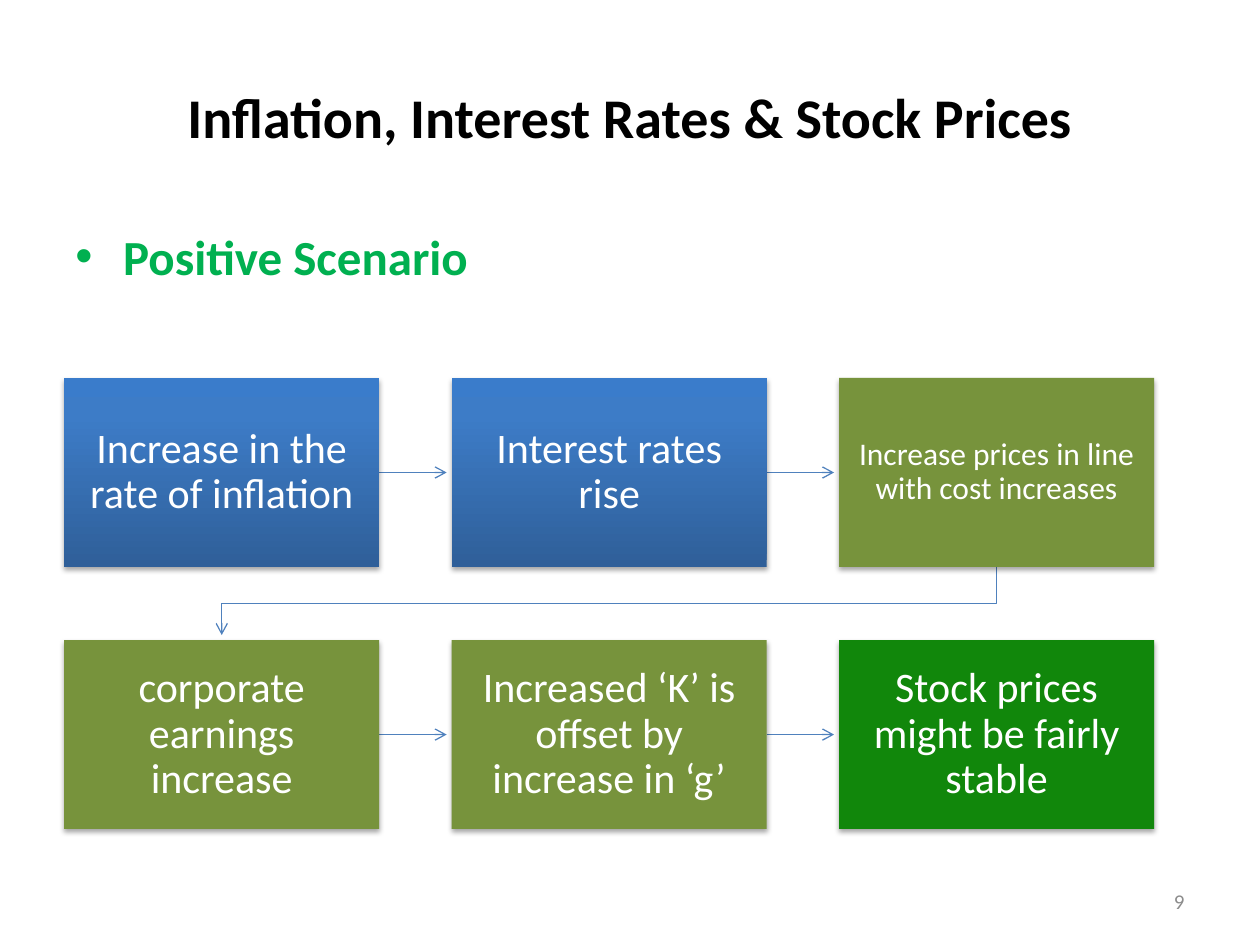
from copy import deepcopy

from lxml.etree import SubElement
from pptx import Presentation
from pptx.dml.color import RGBColor
from pptx.enum.shapes import MSO_CONNECTOR, MSO_SHAPE
from pptx.enum.text import MSO_ANCHOR as Anchor, PP_ALIGN as Align
from pptx.oxml.ns import qn
from pptx.util import Inches, Pt

BLACK = RGBColor(0x00, 0x00, 0x00)
WHITE = RGBColor(0xFF, 0xFF, 0xFF)
GRAY = RGBColor(0x8C, 0x8C, 0x8C)
HEADING_GREEN = RGBColor(0x00, 0xB0, 0x50)
OLIVE = RGBColor(0x77, 0x93, 0x3C)
OUTCOME_GREEN = RGBColor(0x11, 0x87, 0x0B)
ARROW_BLUE = RGBColor(0x4F, 0x81, 0xBD)
BLUE_STOPS = [
    (0, RGBColor(0x2F, 0x5F, 0x99)),
    (0.8, RGBColor(0x3D, 0x7C, 0xC7)),
    (1, RGBColor(0x3A, 0x7C, 0xCB)),
]

COLUMNS = 3
STEP_WIDTH, STEP_HEIGHT = Inches(2.5), Inches(1.5)
ARROW_CLEARANCE = Inches(0.04)

# Text, fill (None for the blue gradient), font size, inset
STEPS = [
    ("Increase in the rate of inflation", None, 24, 0.19),
    ("Interest rates rise", None, 24, 0.19),
    ("Increase prices in line with cost increases", OLIVE, 18, 0.14),
    ("corporate earnings increase", OLIVE, 24, 0.19),
    ("Increased ‘K’ is offset by increase in ‘g’", OLIVE, 24, 0.19),
    ("Stock prices might be fairly stable", OUTCOME_GREEN, 24, 0.19),
]


def write_text(shape, text, size, color, bold=False, align=Align.LEFT,
               anchor=Anchor.MIDDLE, inset=None, line_spacing=None):
    frame = shape.text_frame
    frame.word_wrap = True
    frame.vertical_anchor = anchor
    if inset is not None:
        frame.margin_left = frame.margin_right = Inches(inset)
        frame.margin_top = frame.margin_bottom = Inches(inset)
    paragraph = frame.paragraphs[0]
    paragraph.alignment = align
    paragraph.line_spacing = line_spacing
    run = paragraph.add_run()
    run.text = text
    font = run.font
    font.name, font.size, font.bold = "Calibri", Pt(size), bold
    font.color.rgb = color
    return paragraph


def add_title(slide, left, top, width, height):
    title = slide.shapes.add_textbox(left, top, width, height)
    write_text(title, "Inflation, Interest Rates & Stock Prices", 32, BLACK,
               bold=True, align=Align.CENTER)


def add_scenario(slide, left, top, width, height):
    scenario = slide.shapes.add_textbox(left, top, width, height)
    paragraph = write_text(scenario, "Positive Scenario", 28, HEADING_GREEN,
                           bold=True, anchor=Anchor.TOP)
    paragraph.space_before = Pt(5.6)
    properties = paragraph._p.get_or_add_pPr()
    properties.set("marL", str(Inches(0.38)))
    properties.set("indent", str(-Inches(0.38)))
    SubElement(properties, qn("a:buFont"), typeface="Arial")
    SubElement(properties, qn("a:buChar"), char="•")


def add_page_number(slide, left, top, width, height):
    number = slide.shapes.add_textbox(left, top, width, height)
    write_text(number, "9", 12, GRAY, align=Align.RIGHT)


def fill_with_blue_gradient(shape):
    fill = shape.fill
    fill.gradient()
    fill.gradient_angle = 90
    first_stop = shape._element.spPr.find(".//" + qn("a:gs"))
    first_stop.getparent().append(deepcopy(first_stop))
    for stop, (position, color) in zip(fill.gradient_stops, BLUE_STOPS):
        stop.position = position
        stop.color.rgb = color


def add_soft_shadow(shape):
    shape.shadow.inherit = False
    effects = shape._element.spPr.find(qn("a:effectLst"))
    shadow = SubElement(effects, qn("a:outerShdw"), blurRad=str(Pt(3.1)),
                        dist=str(Pt(1.8)), dir="5400000", rotWithShape="0")
    shade = SubElement(shadow, qn("a:srgbClr"), val="000000")
    SubElement(shade, qn("a:alpha"), val="35000")


def add_step(slide, left, top, text, color, size, inset):
    step = slide.shapes.add_shape(MSO_SHAPE.RECTANGLE, left, top,
                                  STEP_WIDTH, STEP_HEIGHT)
    if color is None:
        fill_with_blue_gradient(step)
    else:
        step.fill.solid()
        step.fill.fore_color.rgb = color
    step.line.fill.background()
    add_soft_shadow(step)
    write_text(step, text, size, WHITE, align=Align.CENTER, inset=inset,
               line_spacing=0.9)


def style_arrow(arrow):
    arrow.line.color.rgb = ARROW_BLUE
    arrow.line.width = Pt(0.75)
    SubElement(arrow.line._get_or_add_ln(), qn("a:tailEnd"), type="arrow")
    properties = arrow._element.spPr
    if properties.find(qn("a:effectLst")) is None:
        SubElement(properties, qn("a:effectLst"))


def add_straight_arrow(slide, start, end, y):
    style_arrow(slide.shapes.add_connector(MSO_CONNECTOR.STRAIGHT,
                                           start, y, end, y))


def add_return_arrow(slide, start_x, start_y, end_x, end_y, turn_y):
    """Lead from the end of one row down to the start of the next."""
    builder = slide.shapes.build_freeform(start_x, start_y)
    builder.add_line_segments(
        [(start_x, turn_y), (end_x, turn_y), (end_x, end_y)], close=False)
    arrow = builder.convert_to_shape()
    arrow.fill.background()
    style_arrow(arrow)


def add_flow(slide, left, top, width, height):
    """Lay the steps out row by row and join each one to the next."""
    pitch_x = (width - STEP_WIDTH) // (COLUMNS - 1)
    pitch_y = height - STEP_HEIGHT
    for index, step in enumerate(STEPS):
        row, column = divmod(index, COLUMNS)
        x, y = left + column * pitch_x, top + row * pitch_y
        if column < COLUMNS - 1:
            add_straight_arrow(slide, x + STEP_WIDTH,
                               x + pitch_x - ARROW_CLEARANCE,
                               y + STEP_HEIGHT // 2)
        elif index < len(STEPS) - 1:
            add_return_arrow(slide, x + STEP_WIDTH // 2, y + STEP_HEIGHT,
                             left + STEP_WIDTH // 2,
                             y + pitch_y - ARROW_CLEARANCE,
                             y + (STEP_HEIGHT + pitch_y) // 2)
        add_step(slide, x, y, *step)


def main():
    deck = Presentation()
    deck.slide_width, deck.slide_height = Inches(10), Inches(7.5)
    slide = deck.slides.add_slide(deck.slide_layouts[6])
    add_title(slide, Inches(0.5), Inches(0.3), Inches(9), Inches(1.25))
    add_scenario(slide, Inches(0.5), Inches(1.75), Inches(9), Inches(0.67))
    add_flow(slide, Inches(0.51), Inches(3), Inches(8.65), Inches(3.58))
    add_page_number(slide, Inches(7.17), Inches(6.95), Inches(2.33), Inches(0.4))
    deck.save("out.pptx")


if __name__ == "__main__":
    main()
